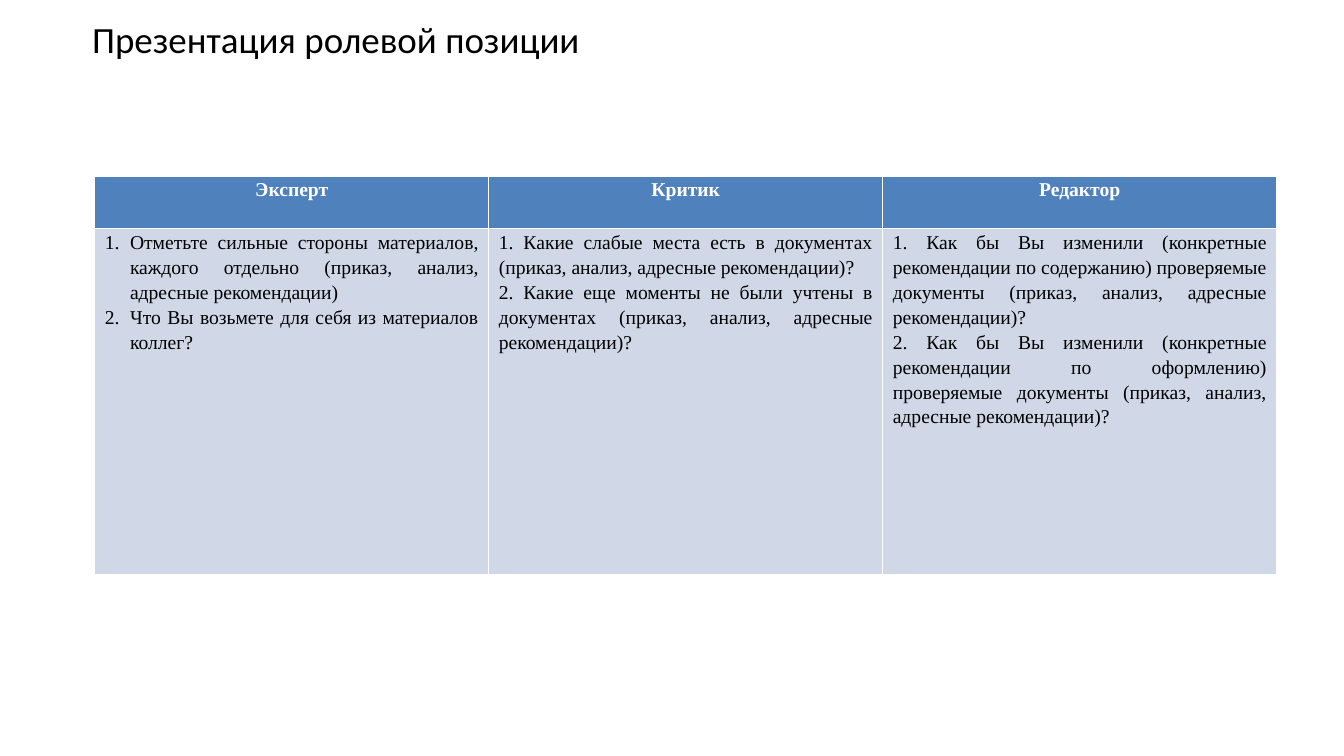
"""Build a slide with a table of questions for three review roles."""
from lxml import etree
from pptx import Presentation
from pptx.dml.color import RGBColor
from pptx.enum.text import MSO_ANCHOR, PP_ALIGN
from pptx.oxml.ns import qn
from pptx.util import Pt

CENTER, JUSTIFY = PP_ALIGN.CENTER, PP_ALIGN.JUSTIFY
TOP = MSO_ANCHOR.TOP
WHITE, BLACK, BLUE, PALE = "FFFFFF", "000000", "4F81BD", "D0D8E8"

ROLES = [
    ("Эксперт", [
        "Отметьте сильные стороны материалов, каждого отдельно (приказ, анализ, адресные рекомендации)",
        "Что Вы возьмете для себя из материалов коллег?",
    ]),
    ("Критик", [
        "1. Какие слабые места есть в документах (приказ, анализ, адресные рекомендации)?",
        "2. Какие еще моменты не были учтены в документах (приказ, анализ, адресные рекомендации)?",
    ]),
    ("Редактор", [
        "1. Как бы Вы изменили (конкретные рекомендации по содержанию) проверяемые документы "
        "(приказ, анализ, адресные рекомендации)?",
        "2. Как бы Вы изменили (конкретные рекомендации по оформлению) проверяемые документы "
        "(приказ, анализ, адресные рекомендации)?",
    ]),
]


def rgb(value):
    return RGBColor.from_string(value)


def fill_cell(cell, text, fill, color, bold, align):
    cell.margin_left = cell.margin_right = Pt(10.8)
    cell.margin_top = cell.margin_bottom = Pt(0)
    cell.vertical_anchor = TOP
    properties = cell._tc.get_or_add_tcPr()
    for side in ("a:lnL", "a:lnR", "a:lnT", "a:lnB"):
        border = etree.SubElement(properties, qn(side), w=str(Pt(1)))
        paint = etree.SubElement(border, qn("a:solidFill"))
        etree.SubElement(paint, qn("a:srgbClr"), val=WHITE)
    cell.fill.solid()
    cell.fill.fore_color.rgb = rgb(fill)
    cell.text_frame.text = text
    for paragraph in cell.text_frame.paragraphs:
        paragraph.alignment = align
        paragraph.line_spacing = 1.15
        font = paragraph.runs[0].font
        font.name, font.size, font.bold = "Times New Roman", Pt(21), bold
        font.color.rgb = rgb(color)


prs = Presentation()
prs.slide_width, prs.slide_height = Pt(1440), Pt(810)
slide = prs.slides.add_slide(prs.slide_layouts[6])

heading = slide.shapes.add_textbox(Pt(36), Pt(18), Pt(648), Pt(90)).text_frame
heading.word_wrap = True
heading.vertical_anchor = TOP
heading.margin_top = Pt(0)
heading.text = "Презентация ролевой позиции"
heading.paragraphs[0].alignment = CENTER
heading_font = heading.paragraphs[0].runs[0].font
heading_font.name, heading_font.size = "Calibri", Pt(39.6)
heading_font.color.rgb = rgb(BLACK)

roles_table = slide.shapes.add_table(
    2, len(ROLES), Pt(101.5), Pt(188.6), Pt(1266.48), Pt(427)).table
roles_table.rows[0].height = Pt(56.2)
roles_table.rows[1].height = Pt(370.8)

for column, (role, questions) in enumerate(ROLES):
    roles_table.columns[column].width = Pt(422.16)
    fill_cell(roles_table.cell(0, column), role, BLUE, WHITE, True, CENTER)
    fill_cell(roles_table.cell(1, column), "\n".join(questions), PALE, BLACK, False, JUSTIFY)

for question in roles_table.cell(1, 0).text_frame.paragraphs:
    numbering = question._p.get_or_add_pPr()
    numbering.set("marL", str(Pt(27)))
    numbering.set("indent", str(Pt(-27)))
    etree.SubElement(numbering, qn("a:buFont"), typeface="+mj-lt")
    etree.SubElement(numbering, qn("a:buAutoNum"), type="arabicPeriod")

prs.save("out.pptx")
